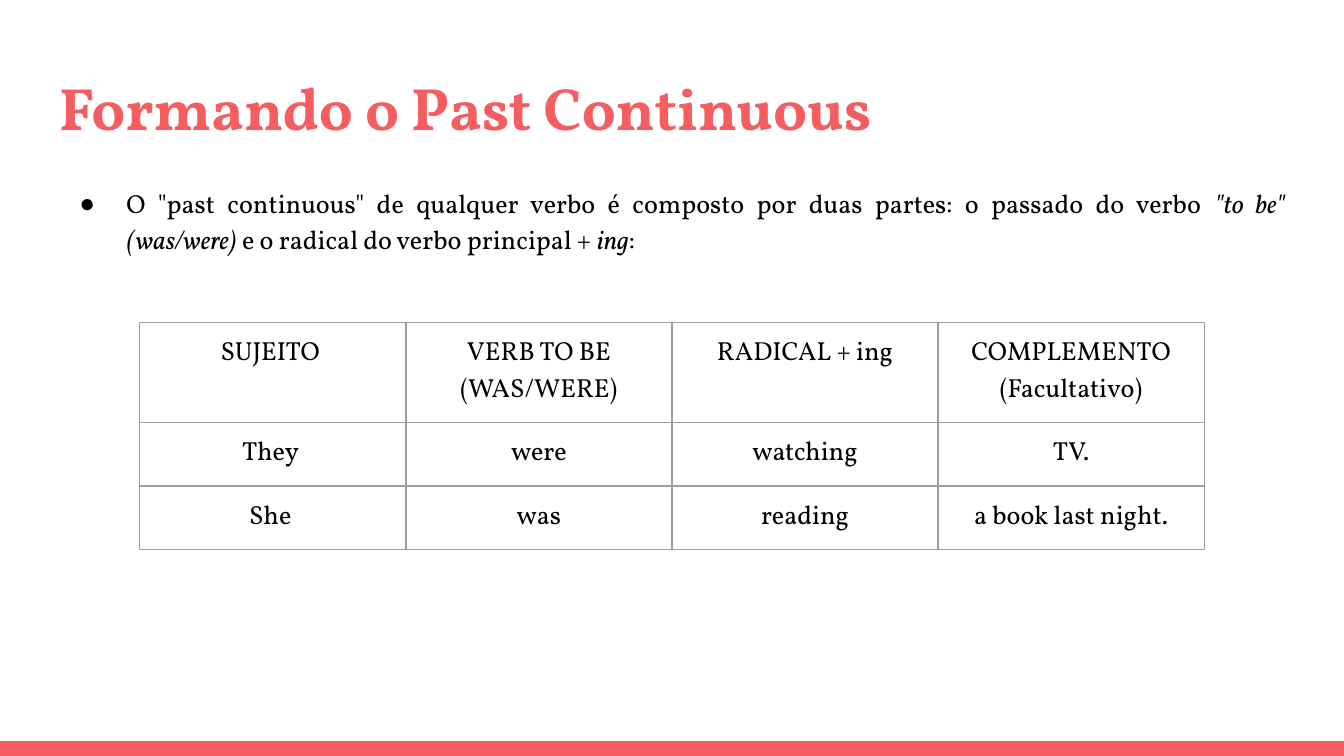
from dataclasses import dataclass

from lxml import etree
from pptx import Presentation
from pptx.dml.color import RGBColor
from pptx.enum.shapes import MSO_SHAPE
from pptx.enum.text import MSO_ANCHOR, MSO_AUTO_SIZE, PP_ALIGN
from pptx.oxml.ns import qn
from pptx.util import Inches, Pt

RECTANGLE = MSO_SHAPE.RECTANGLE
TOP = MSO_ANCHOR.TOP
NO_AUTOFIT = MSO_AUTO_SIZE.NONE
LEFT, CENTER, JUSTIFY = PP_ALIGN.LEFT, PP_ALIGN.CENTER, PP_ALIGN.JUSTIFY


@dataclass(frozen=True)
class Theme:
    font: str = "Vollkorn"
    accent: str = "F55E61"
    ink: str = "000000"
    grid: str = "9E9E9E"
    title_size: int = 32
    body_size: int = 14
    grid_width: float = 0.75
    inset: float = 0.1


THEME = Theme()
SLIDE_W = 10
SLIDE_H = SLIDE_W * 9 / 16

TITLE = "Formando o Past Continuous"
# Each part of the rule is (text, italic)
RULE = [
    ('O "past continuous" de qualquer verbo é composto por duas partes: '
     "o passado do verbo ", False),
    ('"to be" (was/were)', True),
    (" e o radical do verbo principal + ", False),
    ("ing", True),
    (": ", False),
]
EXAMPLES = [
    ["SUJEITO ", "VERB TO BE (WAS/WERE)", "RADICAL + ing", "COMPLEMENTO (Facultativo)"],
    ["They ", "were", "watching", "TV."],
    ["She ", "was", "reading", "a book last night."],
]


def write(paragraph, text, *, size=THEME.body_size, color=THEME.ink,
          bold=False, italic=False, align=LEFT, spacing=1.0):
    """Add one formatted run to a paragraph."""
    paragraph.alignment = align
    paragraph.line_spacing = spacing
    paragraph.space_before = paragraph.space_after = Pt(0)
    run = paragraph.add_run()
    run.text = text
    font = run.font
    font.name, font.size, font.bold, font.italic = THEME.font, Pt(size), bold, italic
    font.color.rgb = RGBColor.from_string(color)


def set_insets(target):
    target.margin_left = target.margin_right = Inches(THEME.inset)
    target.margin_top = target.margin_bottom = Inches(THEME.inset)


def place(placeholder, box):
    """Move a placeholder to its box and return its first paragraph."""
    placeholder.left, placeholder.top, placeholder.width, placeholder.height = map(Inches, box)
    frame = placeholder.text_frame
    set_insets(frame)
    frame.word_wrap = True
    frame.auto_size = NO_AUTOFIT
    frame.vertical_anchor = TOP
    return frame.paragraphs[0]


def add_color(parent, color):
    etree.SubElement(parent, qn("a:srgbClr"), val=color)


def add_bullet(paragraph, indent, hanging):
    """Add a round bullet in the template's bullet font."""
    properties = paragraph._p.get_or_add_pPr()
    properties.set("marL", str(Inches(indent)))
    properties.set("indent", str(-Inches(hanging)))
    add_color(etree.SubElement(properties, qn("a:buClr")), THEME.ink)
    etree.SubElement(properties, qn("a:buChar"), char="●")


def add_borders(cell):
    properties = cell._tc.get_or_add_tcPr()
    for position, side in enumerate(("lnL", "lnR", "lnT", "lnB")):
        line = etree.Element(qn(f"a:{side}"), w=str(Pt(THEME.grid_width)))
        add_color(etree.SubElement(line, qn("a:solidFill")), THEME.grid)
        properties.insert(position, line)


def add_footer_bar(slide, box):
    bar = slide.shapes.add_shape(RECTANGLE, *map(Inches, box))
    bar.shadow.inherit = False
    bar.fill.solid()
    bar.fill.fore_color.rgb = RGBColor.from_string(THEME.accent)
    bar.line.fill.background()


def add_title(slide, box):
    heading = place(slide.shapes.title, box)
    write(heading, TITLE, size=THEME.title_size, color=THEME.accent, bold=True)


def add_rule(slide, box):
    rule = place(slide.placeholders[1], box)
    add_bullet(rule, indent=0.5, hanging=0.35)
    for text, italic in RULE:
        write(rule, text, italic=italic, align=JUSTIFY, spacing=1.15)


def add_examples(slide, box):
    left, top, width, row_height = box
    rows, columns = len(EXAMPLES), len(EXAMPLES[0])
    table = slide.shapes.add_table(
        rows, columns, *map(Inches, (left, top, width, row_height * rows))).table
    table.first_row = table.horz_banding = False
    for column in table.columns:
        column.width = Inches(width / columns)
    for r, words in enumerate(EXAMPLES):
        for c, word in enumerate(words):
            cell = table.cell(r, c)
            set_insets(cell)
            cell.vertical_anchor = TOP
            cell.fill.background()
            add_borders(cell)
            write(cell.text_frame.paragraphs[0], word, align=CENTER)


def main():
    deck = Presentation()
    deck.slide_width, deck.slide_height = Inches(SLIDE_W), Inches(SLIDE_H)
    slide = deck.slides.add_slide(deck.slide_layouts[1])

    margin, bar_height = 0.34, 0.11
    text_width = SLIDE_W - 2 * margin
    add_footer_bar(slide, (0, SLIDE_H - bar_height, SLIDE_W, bar_height))
    add_title(slide, (margin, 0.43, text_width, 0.68))
    add_rule(slide, (margin, 1.26, text_width, 3.74))
    add_examples(slide, (1.04, 2.4, 7.92, 0.42))

    deck.save("out.pptx")


if __name__ == "__main__":
    main()
